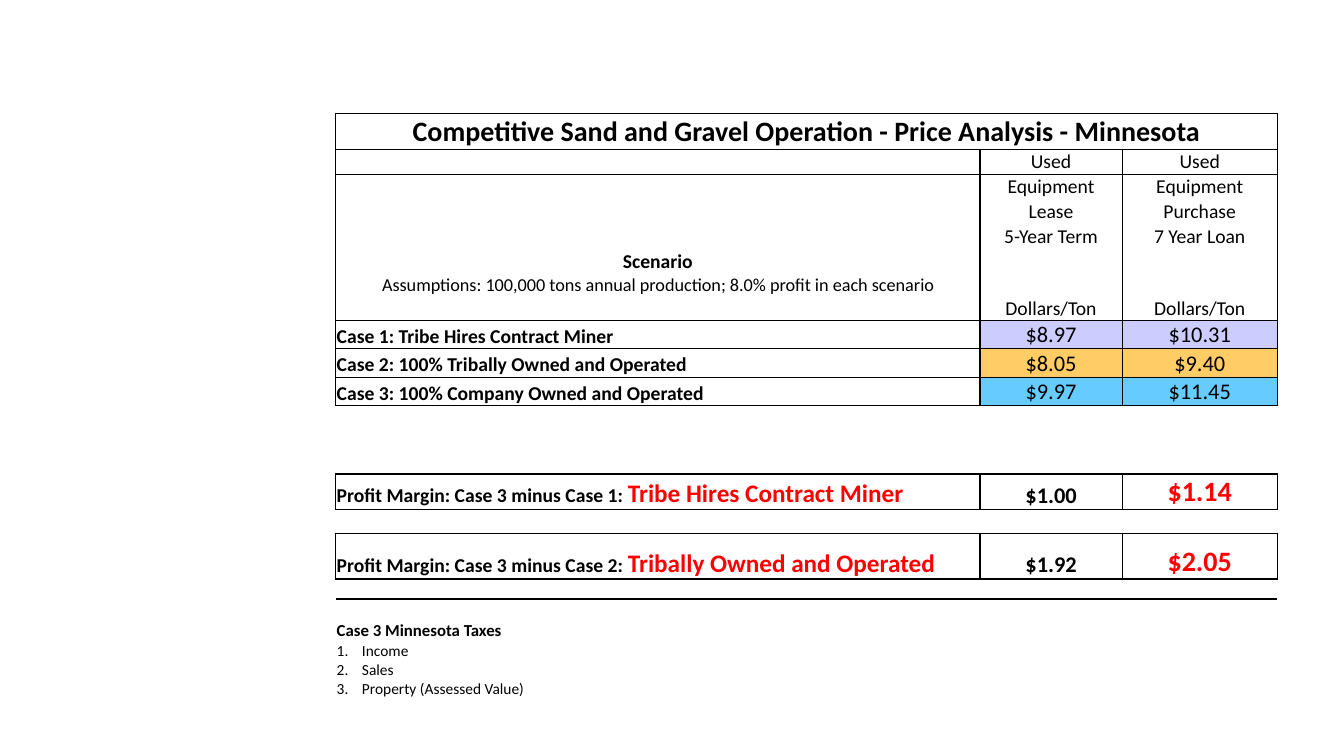
from lxml.etree import SubElement
from pptx import Presentation
from pptx.dml.color import RGBColor
from pptx.enum.text import MSO_ANCHOR, PP_ALIGN
from pptx.oxml.ns import qn
from pptx.util import Inches, Pt

COLORS = {"black": "000000", "red": "FF0000", "lilac": "CCCCFF",
          "orange": "FFCC66", "sky": "66CCFF"}
NO_STYLE = "{2D5ABB26-0587-4C30-8999-92F81FD0307C}"
COLUMN_WIDTHS = [6.39, 1.41, 1.54]
ROW_HEIGHTS = ([0.35] + [0.24] * 4 + [0.71] + [0.28] * 3
               + [0.68, 0.35, 0.24, 0.45, 0.2, 0.2, 0.2, 0.57] + [0.18] * 4)
TITLE_ROW, HEADER_ROW, SCENARIO_ROW, CASE_ROW = 0, 1, 5, 6
MARGIN_ROWS, TAXES_ROW, LIST_ROW = (10, 12), 15, 16


def style(font, size, bold=False, color="black"):
    font.name, font.size, font.bold = "Calibri", Pt(size), bold
    font.color.rgb = RGBColor.from_string(COLORS[color])


def write(cell, text, size, bold=False, color="black", align=PP_ALIGN.CENTER):
    """Put one line in the cell, in its first paragraph if that is still empty."""
    para = cell.text_frame.paragraphs[0]
    if para.runs:
        para = cell.text_frame.add_paragraph()
    para.add_run().text = text
    para.alignment = align
    style(para.font, size, bold, color)
    return para


deck = Presentation()
deck.slide_width, deck.slide_height = Inches(13.33), Inches(7.5)
page = deck.slides.add_slide(deck.slide_layouts[6])
table = page.shapes.add_table(
    len(ROW_HEIGHTS), len(COLUMN_WIDTHS), Inches(3.33), Inches(1.13),
    Inches(sum(COLUMN_WIDTHS)), Inches(sum(ROW_HEIGHTS))).table
table.first_row = table.horz_banding = False
table._tbl.tblPr.find(qn("a:tableStyleId")).text = NO_STYLE
for column, width in zip(table.columns, COLUMN_WIDTHS):
    column.width = Inches(width)
for row, height in zip(table.rows, ROW_HEIGHTS):
    row.height = Inches(height)

# Borders, margins and fills
edges = {row: "LRTB" for row in (TITLE_ROW, 6, 7, 8, *MARGIN_ROWS)}
edges |= {HEADER_ROW: "LRT", 2: "LR", 3: "LR", 4: "LR", SCENARIO_ROW: "LRB",
          9: "TB", 11: "TB", 13: "T"}
for row_index, row in enumerate(table.rows):
    for cell in row.cells:
        cell.vertical_anchor = MSO_ANCHOR.BOTTOM
        cell.margin_left = cell.margin_right = cell.margin_top = Inches(0.01)
        cell.margin_bottom = 0
        properties = cell._tc.get_or_add_tcPr()
        for edge in edges.get(row_index, ""):
            line = SubElement(properties, qn(f"a:ln{edge}"), w=str(Pt(1)))
            SubElement(SubElement(line, qn("a:solidFill")), qn("a:srgbClr"),
                       val=COLORS["black"])
        cell.fill.background()
        # Small type keeps empty rows at their set height
        blank = cell.text_frame.paragraphs[0]
        SubElement(blank._p, qn("a:endParaRPr"), sz="800")

# Title and headings
title = table.cell(TITLE_ROW, 0)
title.merge(table.cell(TITLE_ROW, 2))
write(title, "Competitive Sand and Gravel Operation - Price Analysis - Minnesota",
      20, bold=True)
headings = [("Used", "Equipment", "Lease", "5-Year Term", "Dollars/Ton"),
            ("Used", "Equipment", "Purchase", "7 Year Loan", "Dollars/Ton")]
for column_index, lines in enumerate(headings, 1):
    for row_index, text in enumerate(lines, HEADER_ROW):
        write(table.cell(row_index, column_index), text, 14)
scenario = table.cell(SCENARIO_ROW, 0)
scenario.margin_bottom = Inches(0.24)
write(scenario, "Scenario", 14, bold=True)
write(scenario, "Assumptions: 100,000 tons annual production; "
                "8.0% profit in each scenario", 13)

# Prices per case
cases = [("Case 1: Tribe Hires Contract Miner", "$8.97", "$10.31", "lilac"),
         ("Case 2: 100% Tribally Owned and Operated", "$8.05", "$9.40", "orange"),
         ("Case 3: 100% Company Owned and Operated", "$9.97", "$11.45", "sky")]
for row_index, (label, *prices, color) in enumerate(cases, CASE_ROW):
    write(table.cell(row_index, 0), label, 14, bold=True, align=PP_ALIGN.LEFT)
    for column_index, price in enumerate(prices, 1):
        cell = table.cell(row_index, column_index)
        write(cell, price, 16)
        cell.fill.solid()
        cell.fill.fore_color.rgb = RGBColor.from_string(COLORS[color])

# Profit margins
margins = [("Case 1", "Tribe Hires Contract Miner", "$1.00", "$1.14"),
           ("Case 2", "Tribally Owned and Operated", "$1.92", "$2.05")]
for row_index, (case, owner, lease, purchase) in zip(MARGIN_ROWS, margins):
    para = write(table.cell(row_index, 0), f"Profit Margin: Case 3 minus {case}: ",
                 14, bold=True, align=PP_ALIGN.LEFT)
    span = para.add_run()
    span.text = owner
    style(span.font, 18, bold=True, color="red")
    write(table.cell(row_index, 1), lease, 16, bold=True)
    write(table.cell(row_index, 2), purchase, 20, bold=True, color="red")

# Taxes
write(table.cell(TAXES_ROW, 0), "Case 3 Minnesota Taxes", 12, bold=True,
      align=PP_ALIGN.LEFT)
for tax in ("Income", "Sales", "Property (Assessed Value)"):
    para = write(table.cell(LIST_ROW, 0), tax, 11, align=PP_ALIGN.LEFT)
    layout = para._p.get_or_add_pPr()
    layout.set("marL", str(Inches(0.25)))
    layout.set("indent", str(-Inches(0.25)))
    numbering = SubElement(layout, qn("a:buAutoNum"), type="arabicPeriod")
    layout.insert(0, numbering)

deck.save("out.pptx")
